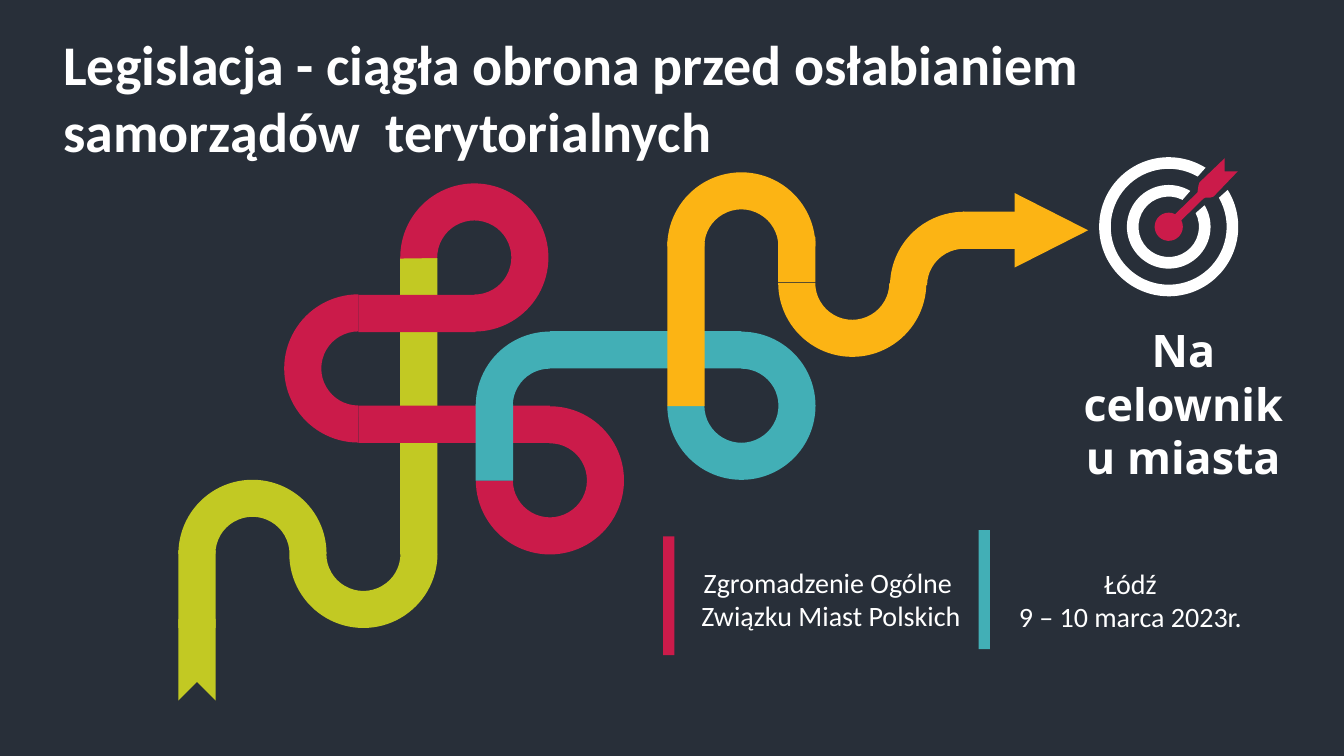
from dataclasses import dataclass
from math import cos, radians, sin, tan

from lxml.etree import SubElement
from pptx import Presentation
from pptx.dml.color import RGBColor
from pptx.enum.shapes import MSO_SHAPE as Preset
from pptx.enum.text import MSO_ANCHOR as Anchor, MSO_AUTO_SIZE as AutoSize, PP_ALIGN as Align
from pptx.oxml.ns import qn
from pptx.shapes.autoshape import Shape
from pptx.slide import Slide
from pptx.util import Inches, Pt

ROWS = 750
COLUMNS = ROWS * 16 / 9
DECK_WIDTH, DECK_HEIGHT = Inches(40) // 3, Inches(7.5)
BAND, LOOP = 37, 147

Point = tuple[float, float]


@dataclass(frozen=True)
class Theme:
    background: str = "282F39"
    light: str = "FFFFFF"
    lime: str = "C2C923"
    crimson: str = "CB1B4A"
    teal: str = "42AFB6"
    amber: str = "FCB414"
    body_font: str = "Calibri"
    goal_font: str = "Noto Sans"
    title_size: int = 40
    goal_size: int = 32
    detail_size: int = 20


THEME = Theme()


@dataclass(frozen=True)
class Piece:
    preset: Preset
    left: float
    top: float
    width: float
    height: float
    colour: str
    turn: float = 0
    adjust: tuple[float, ...] = ()


@dataclass(frozen=True)
class Label:
    text: str
    left: float
    top: float
    width: float
    height: float
    size: int
    font: str = THEME.body_font
    bold: bool = False
    align: Align = Align.CENTER
    anchor: Anchor = Anchor.TOP
    fit: AutoSize = AutoSize.SHAPE_TO_FIT_TEXT


@dataclass(frozen=True)
class Ring:
    outer: float
    inner: float
    outer_gap: float
    inner_gap: float


def loop(left: float, top: float, colour: str, turn: float = 0,
         adjust: tuple[float, ...] = ()) -> Piece:
    return Piece(Preset.BLOCK_ARC, left, top, LOOP, LOOP, colour, turn, adjust)


def upright(left: float, top: float, length: float, colour: str) -> Piece:
    return Piece(Preset.RECTANGLE, left, top, BAND, length, colour)


def level(left: float, top: float, length: float, colour: str) -> Piece:
    inset = (length - BAND) / 2
    return Piece(Preset.RECTANGLE, left + inset, top - inset, BAND, length, colour, 90)


def divider(left: float, top: float, colour: str) -> Piece:
    return Piece(Preset.RECTANGLE, left, top, 11, 118, colour)


RIBBON = (
    loop(177, 476, THEME.lime),
    Piece(Preset.CHEVRON, 146, 627, 99, BAND, THEME.lime, 270),
    upright(177, 546, 77, THEME.lime),
    loop(287, 476, THEME.lime, 180),
    upright(397, 256, 294, THEME.lime),
    loop(397, 182, THEME.crimson, 90, (53.51, 0, 0.25)),
    level(355.5, 292.5, 116, THEME.crimson),
    loop(282, 292, THEME.crimson, 270, (108.21, 0, 0.25)),
    level(355.5, 402.5, 190, THEME.crimson),
    loop(472, 403, THEME.crimson, 180, (53.51, 0, 0.25)),
    upright(472, 401, 76, THEME.teal),
    loop(472, 329, THEME.teal, 0, (107.97, 162.07, 0.25)),
    level(545.5, 328.5, 190, THEME.teal),
    loop(662, 329, THEME.teal, 180, (53.84, 0, 0.25)),
    upright(662, 240, 163, THEME.amber),
    loop(662, 171, THEME.amber),
    loop(772, 207, THEME.amber, 180),
    upright(772, 235, 45, THEME.amber),
    loop(883, 210, THEME.amber, 270, (162.6, 0, 0.25)),
    Piece(Preset.ISOSCELES_TRIANGLE, 1006, 192, 74, 73, THEME.amber, 90),
    level(955, 210, 77, THEME.amber),
)
DIVIDERS = (divider(971, 526, THEME.teal), divider(658, 532, THEME.crimson))

LABELS = (
    Label("Na celowniku miasta", 1064, 315, 220, 172, THEME.goal_size,
          THEME.goal_font, True),
    Label("Legislacja - ciągła obrona przed osłabianiem samorządów  terytorialnych",
          53, 24, 1177, 145, THEME.title_size, bold=True, align=Align.LEFT),
    Label("Łódź\n9 – 10 marca 2023r.", 980, 526, 283, 138, THEME.detail_size,
          anchor=Anchor.MIDDLE, fit=AutoSize.NONE),
    Label("Zgromadzenie Ogólne \nZwiązku Miast Polskich",
          678, 556, 293, 77, THEME.detail_size),
)

TARGET_CENTRE = (1159.5, 225)
DART_ANGLE = -45
RINGS = (Ring(69, 57.5, 13, 15), Ring(41.5, 30, 14, 18))
BULLSEYE_RADIUS, SHAFT_GAP = 14, 18
DART = ((1188, 191), (1189, 184), (1190, 181), (1215, 157), (1215, 170),
        (1228, 170), (1204, 195), (1201, 196), (1196, 196), (1194, 197))


def across(columns: float) -> int:
    return round(DECK_WIDTH * columns / COLUMNS)


def down(rows: float) -> int:
    return round(DECK_HEIGHT * rows / ROWS)


def paint(shape: Shape, colour: str) -> None:
    shape.shadow.inherit = False
    shape.fill.solid()
    shape.fill.fore_color.rgb = RGBColor.from_string(colour)
    shape.line.fill.background()


def draw_piece(page: Slide, piece: Piece) -> None:
    shape = page.shapes.add_shape(
        piece.preset, across(piece.left), down(piece.top),
        across(piece.width), down(piece.height))
    shape.rotation = piece.turn
    for index, value in enumerate(piece.adjust):
        shape.adjustments[index] = value
    paint(shape, piece.colour)


def open_circle(radius: float, gap: float, curves: int = 8) -> list[Point]:
    step = radians(360 - 2 * gap) / curves
    reach = radius * 4 / 3 * tan(step / 4)
    points = []
    for index in range(curves + 1):
        angle = radians(DART_ANGLE + gap) + step * index
        for pull in (-reach, 0, reach):
            points.append((TARGET_CENTRE[0] + radius * cos(angle) - pull * sin(angle),
                           TARGET_CENTRE[1] + radius * sin(angle) + pull * cos(angle)))
    return points[1:-1]


def straight(start: Point, *stops: Point) -> list[Point]:
    points = []
    for stop in stops:
        points += [start, stop, stop]
        start = stop
    return points


def draw_outline(page: Slide, points: list[Point], colour: str) -> None:
    corners = [(across(column), down(row)) for column, row in points]
    builder = page.shapes.build_freeform(*corners[0])
    builder.add_line_segments(corners[1:], close=True)
    shape = builder.convert_to_shape()
    lines = list(shape.element.iter(qn("a:lnTo")))
    for first in range(0, len(lines), 3):
        trio = lines[first:first + 3]
        curve = SubElement(trio[0].getparent(), qn("a:cubicBezTo"))
        trio[0].addprevious(curve)
        for line in trio:
            curve.append(line[0])
            line.getparent().remove(line)
    paint(shape, colour)


def draw_target(page: Slide) -> None:
    for ring in RINGS:
        outside = open_circle(ring.outer, ring.outer_gap)
        inside = open_circle(ring.inner, ring.inner_gap)[::-1]
        bridge = straight(outside[-1], inside[0])
        draw_outline(page, outside + bridge + inside[1:], THEME.light)
    bullseye = open_circle(BULLSEYE_RADIUS, SHAFT_GAP, 6)
    draw_outline(page, bullseye + straight(bullseye[-1], *DART), THEME.crimson)


def draw_label(page: Slide, label: Label) -> None:
    box = page.shapes.add_textbox(across(label.left), down(label.top),
                                  across(label.width), down(label.height))
    frame = box.text_frame
    frame.word_wrap = True
    frame.auto_size = label.fit
    frame.vertical_anchor = label.anchor
    frame.text = label.text
    for para in frame.paragraphs:
        para.alignment = label.align
        for span in para.runs:
            span.font.name = label.font
            span.font.size = Pt(label.size)
            span.font.bold = label.bold
            span.font.color.rgb = RGBColor.from_string(THEME.light)


def main() -> None:
    deck = Presentation()
    deck.slide_width, deck.slide_height = DECK_WIDTH, DECK_HEIGHT
    page = deck.slides.add_slide(deck.slide_layouts[6])
    page.background.fill.solid()
    page.background.fill.fore_color.rgb = RGBColor.from_string(THEME.background)
    for piece in RIBBON + DIVIDERS:
        draw_piece(page, piece)
    draw_target(page)
    for label in LABELS:
        draw_label(page, label)
    deck.save("out.pptx")


if __name__ == "__main__":
    main()
